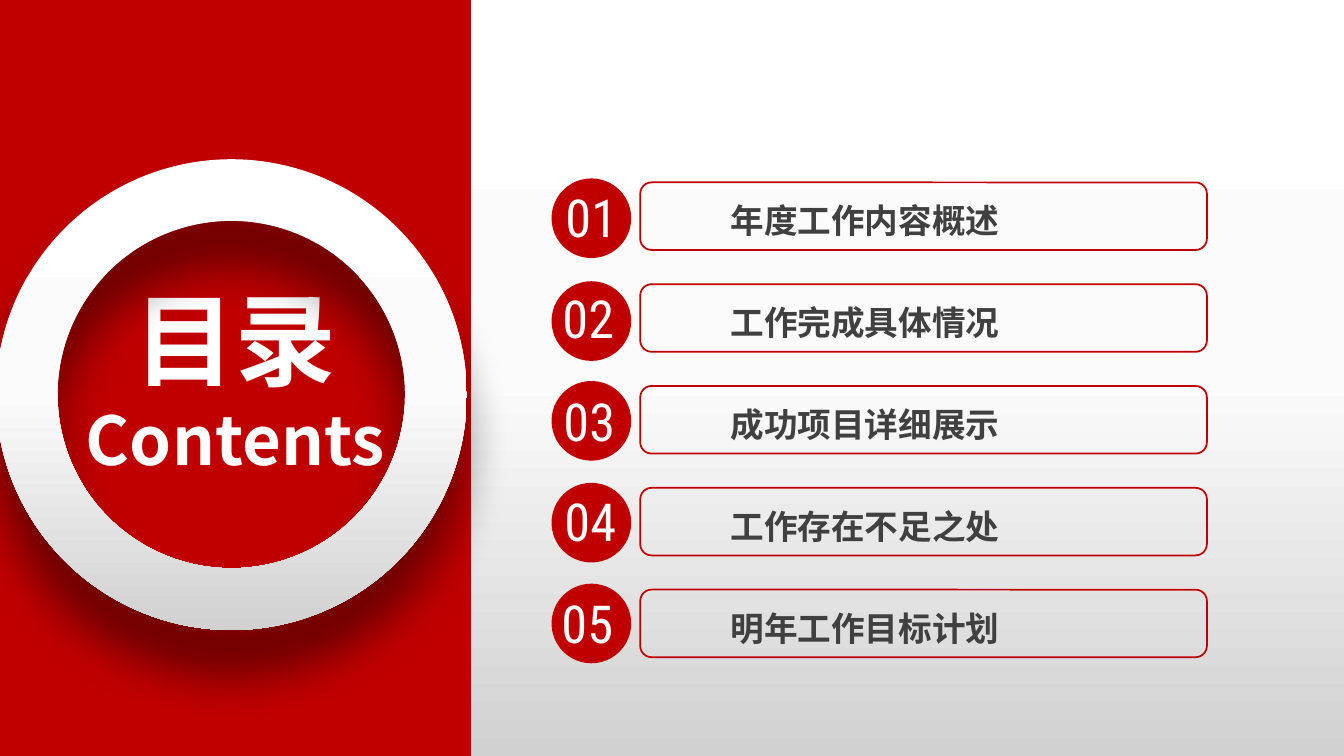
from copy import deepcopy
from dataclasses import dataclass

from lxml import etree
from pptx import Presentation, util as u
from pptx.dml.color import RGBColor
from pptx.enum import shapes, text
from pptx.oxml import ns

RED, WHITE, GREY = "C00000", "FFFFFF", "404040"
HAN_FONT, NUMBER_FONT = "Noto Sans CJK SC", "Roboto Condensed"
SILVER = [(0, "FFFFFF"), (0.5, "FBFBFB"), (1, "D1D1D1")]


@dataclass
class Chapter:
    number: str
    title: str
    disc_top: float
    number_left: float
    number_top: float


CHAPTERS = [
    Chapter("01", "年度工作内容概述", 1.77, 5.51, 1.79),
    Chapter("02", "工作完成具体情况", 2.79, 5.48, 2.79),
    Chapter("03", "成功项目详细展示", 3.78, 5.49, 3.81),
    Chapter("04", "工作存在不足之处", 4.79, 5.5, 4.8),
    Chapter("05", "明年工作目标计划", 5.79, 5.47, 5.82),
]
FRAME_TOP, FRAME_PITCH = 1.81, 1.01


def color(value: str) -> RGBColor:
    return RGBColor.from_string(value)


def fill_silver(fill, element) -> None:
    """Three-stop vertical gradient, light at the top."""
    fill.gradient()
    fill.gradient_angle = 270
    stop_list = next(element.iter(ns.qn("a:gsLst")))
    stop_list.insert(1, deepcopy(stop_list[0]))
    for stop, (position, value) in zip(fill.gradient_stops, SILVER):
        stop.position = position
        stop.color.rgb = color(value)


def add_outline(slide, kind, left: float, top: float, width: float, height: float,
                fill: str | None = None, line: str | None = None):
    shape = slide.shapes.add_shape(kind, u.Inches(left), u.Inches(top),
                                   u.Inches(width), u.Inches(height))
    shape.shadow.inherit = False
    if fill:
        shape.fill.solid()
        shape.fill.fore_color.rgb = color(fill)
    else:
        shape.fill.background()
    if line:
        shape.line.color.rgb = color(line)
        shape.line.width = u.Pt(1.25)
    else:
        shape.line.fill.background()
    return shape


def add_box(slide, left: float, top: float, width: float, height: float):
    return slide.shapes.add_textbox(u.Inches(left), u.Inches(top),
                                    u.Inches(width), u.Inches(height))


def write(shape, content: str, *, size: float, font: str, fill: str, bold: bool = False,
          align=text.PP_ALIGN.LEFT, anchor=text.MSO_ANCHOR.TOP,
          before: float | None = None, append: bool = False) -> None:
    frame = shape.text_frame
    frame.word_wrap = True
    frame.vertical_anchor = anchor
    paragraph = frame.add_paragraph() if append else frame.paragraphs[0]
    paragraph.alignment = align
    if before is not None:
        paragraph.space_before = u.Pt(before)
    run = paragraph.add_run()
    run.text = content
    run.font.size = u.Pt(size)
    run.font.name = font
    run.font.bold = bold
    run.font.color.rgb = color(fill)
    east_asian = etree.SubElement(run.font._element, ns.qn("a:ea"))
    east_asian.set("typeface", font)


def add_drop_shadow(shape) -> None:
    effects = shape._element.spPr.find(ns.qn("a:effectLst"))
    shadow = etree.SubElement(effects, ns.qn("a:outerShdw"), blurRad=str(u.Pt(33)),
                              dist=str(u.Pt(33)), dir="5400000", algn="t", rotWithShape="0")
    black = etree.SubElement(shadow, ns.qn("a:srgbClr"), val="000000")
    etree.SubElement(black, ns.qn("a:alpha"), val="43000")


def add_chapter(slide, chapter: Chapter, frame_top: float) -> None:
    add_outline(slide, shapes.MSO_SHAPE.OVAL, 5.47, chapter.disc_top, 0.79, 0.79, fill=RED)
    number = add_box(slide, chapter.number_left, chapter.number_top, 1.12, 0.73)
    write(number, chapter.number, size=37.4, font=NUMBER_FONT, fill=WHITE)
    rounded = shapes.MSO_SHAPE.ROUNDED_RECTANGLE
    title = add_outline(slide, rounded, 7.12, frame_top + 0.1, 4.12, 0.56)
    write(title, chapter.title, size=24, font=HAN_FONT, fill=GREY, bold=True)
    add_outline(slide, rounded, 6.35, frame_top, 5.62, 0.67, line=RED)


def add_contents_panel(slide) -> None:
    add_outline(slide, shapes.MSO_SHAPE.RECTANGLE, 0, 0, 4.67, 7.5, fill=RED)
    heading = add_box(slide, 0.69, 3.39, 3.29, 0.72)
    style = dict(font=HAN_FONT, fill=WHITE, bold=True, align=text.PP_ALIGN.CENTER,
                 anchor=text.MSO_ANCHOR.MIDDLE)
    write(heading, "目录", size=72, **style)
    write(heading, "Contents", size=48, before=0, append=True, **style)
    ring = add_outline(slide, shapes.MSO_SHAPE.DONUT, -0.04, 1.58, 4.67, 4.67)
    ring.adjustments[0] = 0.131
    fill_silver(ring.fill, ring._element)
    add_drop_shadow(ring)


def main() -> None:
    deck = Presentation()
    deck.slide_width, deck.slide_height = u.Inches(13.33), u.Inches(7.5)
    slide = deck.slides.add_slide(deck.slide_layouts[6])
    fill_silver(slide.background.fill, slide._element)
    for index, chapter in enumerate(CHAPTERS):
        add_chapter(slide, chapter, FRAME_TOP + index * FRAME_PITCH)
    add_contents_panel(slide)
    deck.save("out.pptx")


if __name__ == "__main__":
    main()
